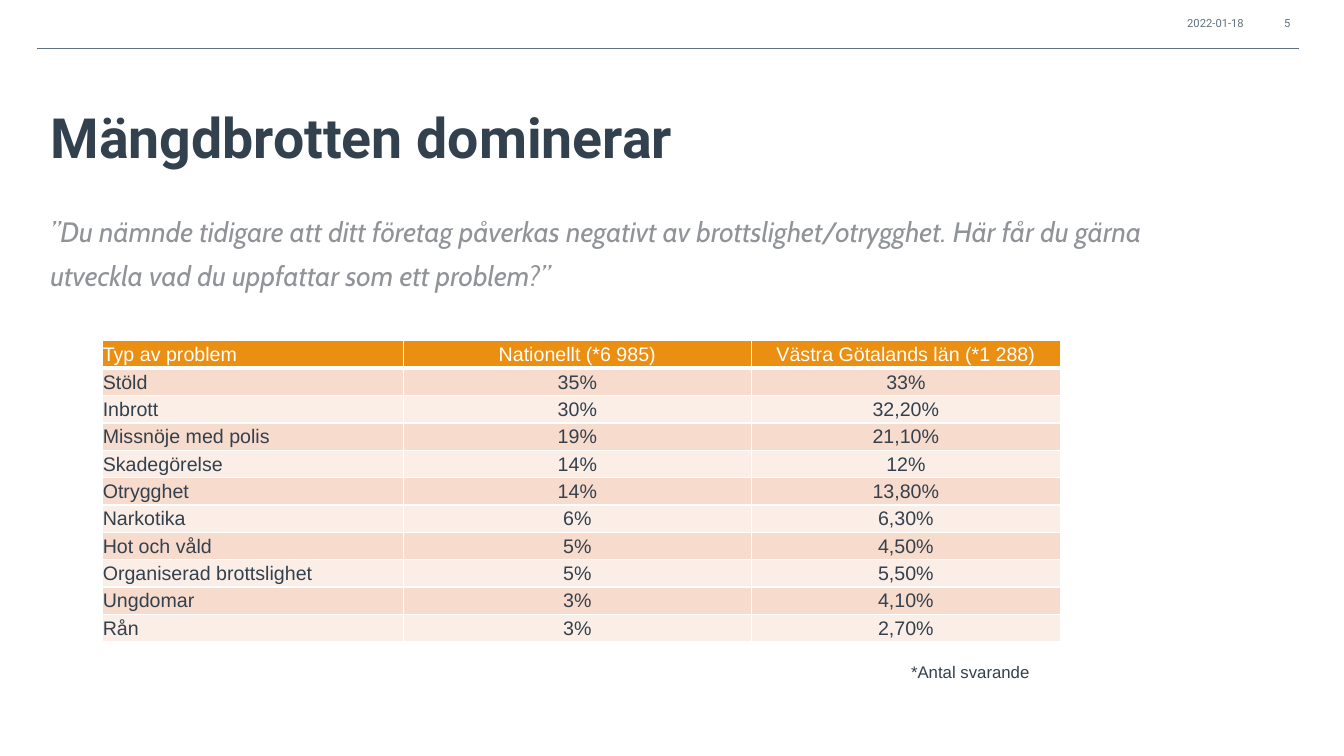
"""Build the slide on the most common types of crime problem."""
from lxml.etree import SubElement
from pptx import Presentation
from pptx.dml.color import RGBColor
from pptx.enum.shapes import MSO_CONNECTOR as Connector
from pptx.enum.text import MSO_ANCHOR as Anchor, MSO_AUTO_SIZE as AutoSize, PP_ALIGN as Align
from pptx.oxml.ns import qn
from pptx.util import Cm, Pt

COLORS = {
    "dark": "33414E",
    "slate": "61717F",
    "quote": "909397",
    "orange": "EA8F12",
    "peach": "F7DBCC",
    "light": "FBEEE7",
    "white": "FFFFFF",
}


def write(frame, text, font="Arial", size=14, color="dark", bold=False, italic=False,
          align=Align.LEFT, anchor=Anchor.TOP, spacing=1.0):
    """Put one formatted paragraph in a text frame."""
    frame.word_wrap = True
    frame.vertical_anchor = anchor
    para = frame.paragraphs[0]
    para.alignment = align
    para.line_spacing = spacing
    span = para.add_run()
    span.text = text
    span.font.name = font
    span.font.size = Pt(size)
    span.font.bold = bold
    span.font.italic = italic
    span.font.color.rgb = RGBColor.from_string(COLORS[color])


def add_border(cell, side, width):
    """Draw one white edge of a table cell."""
    line = SubElement(cell._tc.get_or_add_tcPr(), qn(f"a:{side}"), w=str(Pt(width)))
    fill = SubElement(line, qn("a:solidFill"))
    SubElement(fill, qn("a:srgbClr"), val=COLORS["white"])


deck = Presentation()
deck.slide_width = Cm(33.87)
deck.slide_height = Cm(19.05)
slide = deck.slides.add_slide(deck.slide_layouts[5])
shapes = slide.shapes

rule = shapes.add_connector(Connector.STRAIGHT, Cm(0.93), Cm(1.22), Cm(32.74), Cm(1.22))
rule.line.color.rgb = RGBColor.from_string(COLORS["slate"])
rule.line.width = Pt(0.5)
SubElement(rule._element.spPr, qn("a:effectLst"))

title = shapes.title
title.left, title.top, title.width, title.height = Cm(1.02), Cm(2.16), Cm(29.21), Cm(2.26)
title.text_frame.auto_size = AutoSize.NONE
write(title.text_frame, "Mängdbrotten dominerar", font="Roboto", size=39.6, bold=True,
      anchor=Anchor.BOTTOM, spacing=0.9)

small = dict(font="Roboto", size=8, color="slate", align=Align.RIGHT, anchor=Anchor.MIDDLE)
question = ("”Du nämnde tidigare att ditt företag påverkas negativt av brottslighet/otrygghet. "
            "Här får du gärna utveckla vad du uppfattar som ett problem?”")
texts = [
    (question, (1.02, 5.03, 29.21, 4.17),
     dict(font="Cabin", size=20, color="quote", italic=True, spacing=1.3)),
    ("2022-01-18", (29.24, 0.3, 2.36, 0.56), small),
    ("5", (31.83, 0.33, 0.94, 0.51), small),
    ("*Antal svarande", (22.71, 16.56, 6.53, 0.76), dict(size=12)),
]
for text, place, style in texts:
    box = shapes.add_textbox(*map(Cm, place))
    write(box.text_frame, text, **style)

rows = [
    ("Typ av problem", "Nationellt (*6 985)", "Västra Götalands län (*1 288)"),
    ("Stöld", "35%", "33%"),
    ("Inbrott", "30%", "32,20%"),
    ("Missnöje med polis", "19%", "21,10%"),
    ("Skadegörelse", "14%", "12%"),
    ("Otrygghet", "14%", "13,80%"),
    ("Narkotika", "6%", "6,30%"),
    ("Hot och våld", "5%", "4,50%"),
    ("Organiserad brottslighet", "5%", "5,50%"),
    ("Ungdomar", "3%", "4,10%"),
    ("Rån", "3%", "2,70%"),
]
widths = [7.6, 8.76, 7.8]
row_height = 0.69
table = shapes.add_table(len(rows), len(widths), Cm(2.57), Cm(8.59),
                         Cm(sum(widths)), Cm(row_height * len(rows))).table
table.horz_banding = False
for column, width in zip(table.columns, widths):
    column.width = Cm(width)

for i, values in enumerate(rows):
    table.rows[i].height = Cm(row_height)
    header = i == 0
    fill = "orange" if header else ("light", "peach")[i % 2]
    for j, value in enumerate(values):
        cell = table.cell(i, j)
        cell.margin_left = cell.margin_right = cell.margin_top = Cm(0.02)
        cell.margin_bottom = Cm(0)
        cell.vertical_anchor = Anchor.MIDDLE
        for side in ("lnL", "lnR", "lnT", "lnB"):
            add_border(cell, side, 3 if header and side == "lnB" else 1)
        cell.fill.solid()
        cell.fill.fore_color.rgb = RGBColor.from_string(COLORS[fill])
        write(cell.text_frame, value, color="white" if header else "dark",
              align=Align.CENTER if j else Align.LEFT, anchor=Anchor.MIDDLE)

deck.save("out.pptx")
